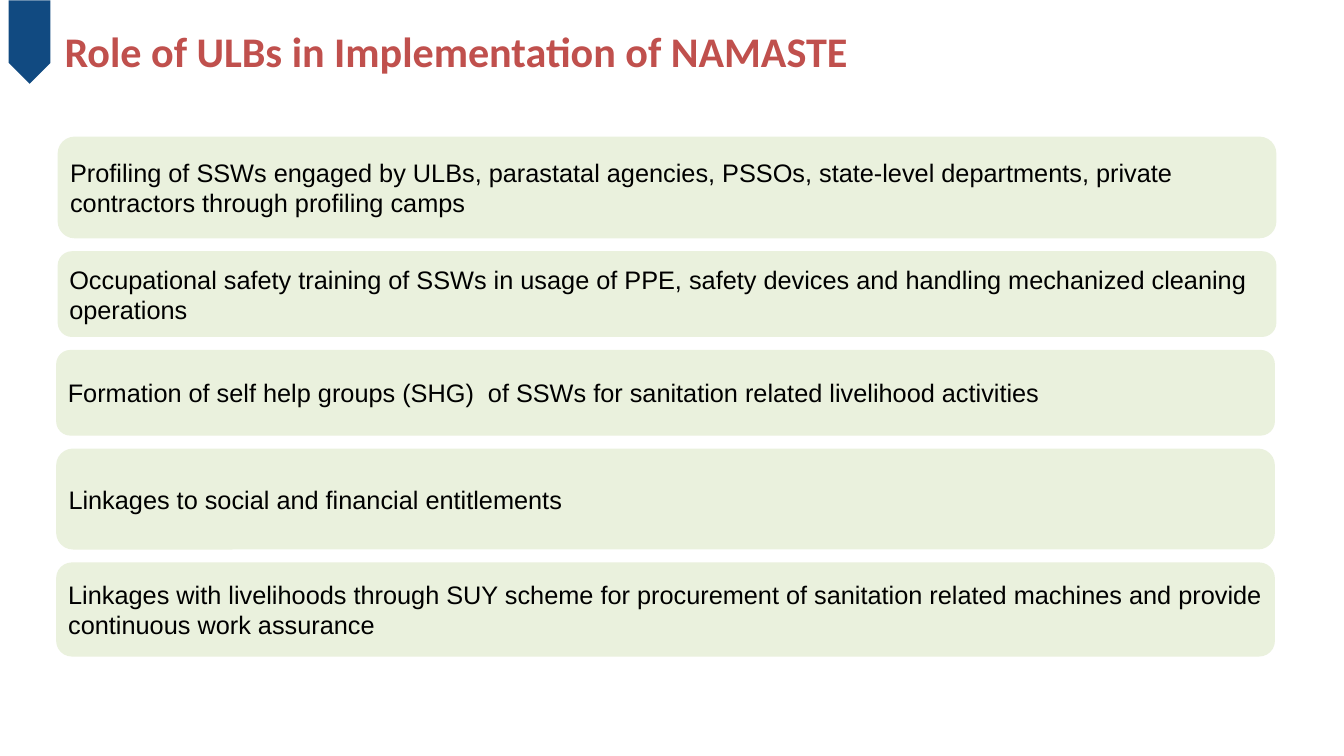
from pptx import Presentation
from pptx.dml.color import RGBColor
from pptx.enum.shapes import MSO_SHAPE
from pptx.enum.text import MSO_ANCHOR, PP_ALIGN
from pptx.util import Inches, Pt

GAP = 0.17
# Left, height and text of each role, from top to bottom
ROLES = [
    (0.76, 1.34, "Profiling of SSWs engaged by ULBs, parastatal agencies, PSSOs, "
                 "state-level departments, private contractors through profiling camps"),
    (0.76, 1.13, "Occupational safety training of SSWs in usage of PPE, safety devices "
                 "and handling mechanized cleaning operations"),
    (0.74, 1.13, "Formation of self help groups (SHG)  of SSWs for sanitation related "
                 "livelihood activities"),
    (0.74, 1.33, "Linkages to social and financial entitlements"),
    (0.74, 1.24, "Linkages with livelihoods through SUY scheme for procurement of "
                 "sanitation related machines and provide continuous work assurance"),
]


def rgb(color):
    return RGBColor.from_string(color)


def set_text(sp, text, size=24, font="Arial", color="000000", bold=False,
             margins=(0.1, 0.05)):
    tf = sp.text_frame
    tf.word_wrap = True
    tf.vertical_anchor = MSO_ANCHOR.MIDDLE
    tf.margin_left = tf.margin_right = Inches(margins[0])
    tf.margin_top = tf.margin_bottom = Inches(margins[1])
    p = tf.paragraphs[0]
    p.alignment = PP_ALIGN.LEFT
    r = p.add_run()
    r.text = text
    r.font.size = Pt(size)
    r.font.name = font
    r.font.bold = bold
    r.font.color.rgb = rgb(color)


def add_filled_shape(s, kind, left, top, width, height, fill):
    sp = s.shapes.add_shape(kind, Inches(left), Inches(top), Inches(width), Inches(height))
    sp.shadow.inherit = False
    sp.fill.solid()
    sp.fill.fore_color.rgb = rgb(fill)
    sp.line.fill.background()
    return sp


def add_title(s, text):
    sp = s.shapes.title
    sp.left, sp.top = Inches(0.74), Inches(0.23)
    sp.width, sp.height = Inches(15.82), Inches(0.87)
    set_text(sp, text, size=40, font="Calibri", color="C0504D", bold=True,
             margins=(0.11, 0.06))


def add_role_cards(s, top):
    for left, height, text in ROLES:
        sp = add_filled_shape(s, MSO_SHAPE.ROUNDED_RECTANGLE, left, top, 16.06, height, "EAF1DD")
        set_text(sp, text)
        top += height + GAP


def main():
    prs = Presentation()
    prs.slide_width, prs.slide_height = Inches(17.71), Inches(9.96)
    s = prs.slides.add_slide(prs.slide_layouts[5])

    # Heading with its ribbon marker
    add_title(s, "Role of ULBs in Implementation of NAMASTE")
    ribbon = add_filled_shape(s, MSO_SHAPE.PENTAGON, -0.16, 0.28, 1.1, 0.55, "114A81")
    ribbon.rotation = 90

    # Stack of roles
    add_role_cards(s, top=1.8)

    prs.save("out.pptx")


if __name__ == "__main__":
    main()
